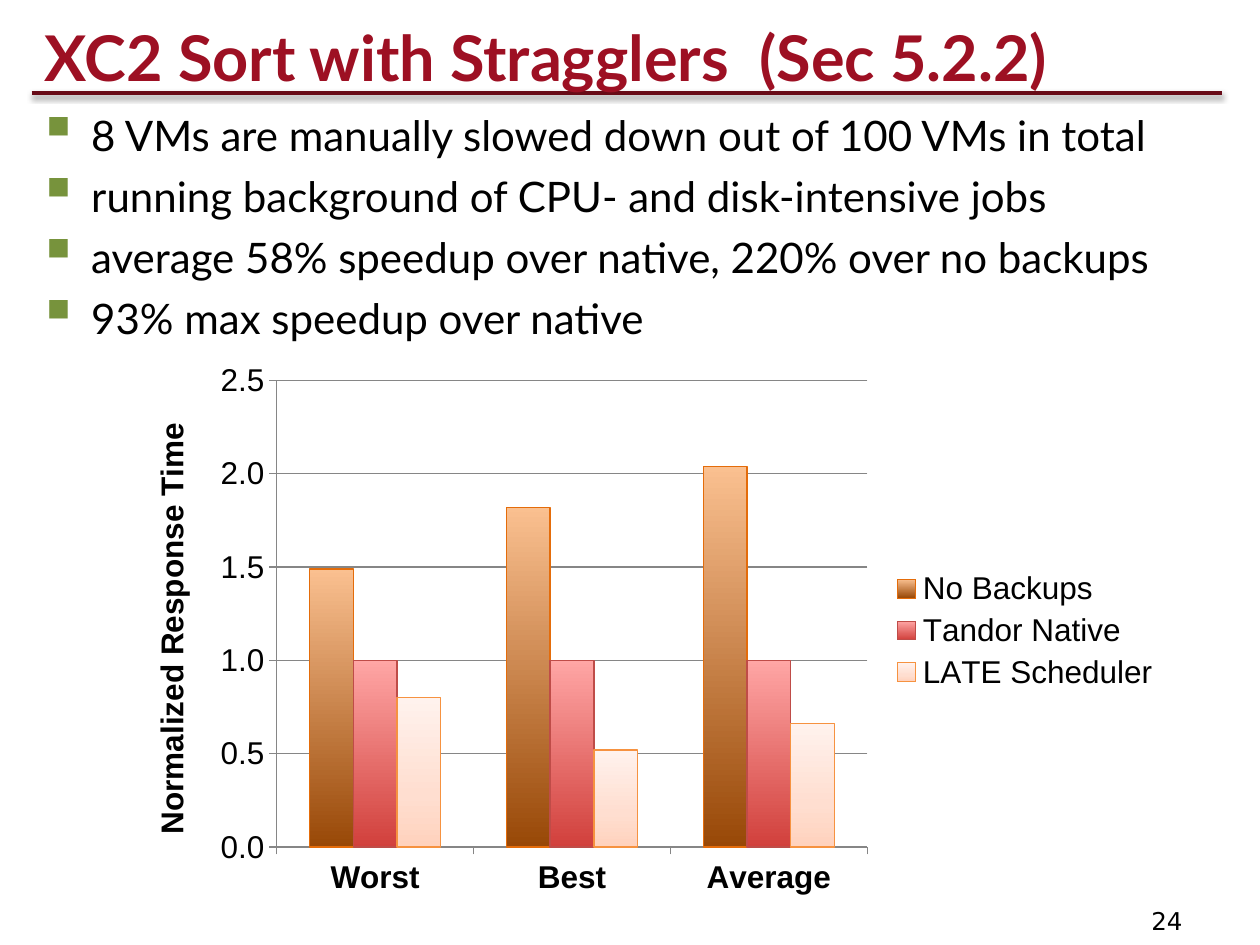
from pptx import Presentation
from pptx import util as u
from pptx.chart import data
from pptx.dml.color import RGBColor
from pptx.enum import chart as ch, shapes, text
from pptx.oxml import parse_xml
from pptx.oxml.ns import nsdecls

CRIMSON = RGBColor(0x9D, 0x10, 0x23)
MAROON = RGBColor(0x68, 0x0B, 0x17)
BLACK = RGBColor(0, 0, 0)
GREEN = RGBColor(0x77, 0x93, 0x3C)
GRAY = RGBColor(0x86, 0x86, 0x86)
ORANGE = RGBColor(0xE4, 0x6C, 0x0A)
RED = RGBColor(0xBF, 0x4C, 0x48)
PEACH = RGBColor(0xF6, 0x92, 0x40)
BROWN_STOPS = [(0, RGBColor(0x98, 0x48, 0x07)), (100, RGBColor(0xFA, 0xC0, 0x90))]
RED_STOPS = [(0, RGBColor(0xD1, 0x40, 0x3C)), (100, RGBColor(0xFF, 0xA6, 0xA5))]
PEACH_STOPS = [(0, RGBColor(0xFF, 0xD2, 0xBD)), (35, RGBColor(0xFF, 0xDE, 0xD0)),
               (100, RGBColor(0xFF, 0xF2, 0xED))]


def style(font, size, name, color=BLACK, bold=False):
    font.size, font.name, font.bold = u.Pt(size), name, bold
    font.color.rgb = color


def add_text(page, place, lines, size, name, color=BLACK, bold=False):
    box = page.shapes.add_textbox(*[u.Cm(value) for value in place])
    frame = box.text_frame
    frame.word_wrap = True
    frame.text = "\n".join(lines)
    for para in frame.paragraphs:
        for span in para.runs:
            style(span.font, size, name, color, bold)
    return frame


deck = Presentation()
deck.slide_width, deck.slide_height = u.Cm(25.4), u.Cm(19.05)
page = deck.slides.add_slide(deck.slide_layouts[6])

# Rule under the title, with a soft shadow
rule = page.shapes.add_connector(shapes.MSO_CONNECTOR.STRAIGHT,
                                 u.Cm(0.64), u.Cm(1.88), u.Cm(24.64), u.Cm(1.88))
rule.line.color.rgb = MAROON
rule.line.width = u.Pt(2)
rule._element.spPr.append(parse_xml(
    f'<a:effectLst {nsdecls("a")}>'
    f'<a:outerShdw blurRad="{u.Pt(3.1)}" dist="{u.Pt(1.6)}" dir="5400000" rotWithShape="0">'
    f'<a:srgbClr val="{BLACK}"><a:alpha val="38000"/></a:srgbClr>'
    '</a:outerShdw></a:effectLst>'))

# Title
title = add_text(page, (0.64, 0.23, 24, 1.8), ["XC2 Sort with Stragglers  (Sec 5.2.2)"],
                 36, "Lato", CRIMSON, True)
title.vertical_anchor = text.MSO_ANCHOR.MIDDLE

# Bullet list (the section sign is the small square in Wingdings)
body = add_text(page, (0.64, 2.08, 24, 10.16), [
    "8 VMs are manually slowed down out of 100 VMs in total",
    "running background of CPU- and disk-intensive jobs",
    "average 58% speedup over native, 220% over no backups",
    "93% max speedup over native",
], 24, "Lato")
for para in body.paragraphs:
    para.space_after = u.Pt(6)
    props = para._p.get_or_add_pPr()
    props.set("marL", str(u.Cm(0.95)))
    props.set("indent", str(-u.Cm(0.95)))
    for bullet in (f'<a:buClr {nsdecls("a")}><a:srgbClr val="{GREEN}"/></a:buClr>',
                   f'<a:buSzPct {nsdecls("a")} val="150000"/>',
                   f'<a:buFont {nsdecls("a")} typeface="Wingdings" charset="2"/>',
                   f'<a:buChar {nsdecls("a")} char="§"/>'):
        props.append(parse_xml(bullet))

# Chart
series_table = [
    ("No Backups", (1.49, 1.82, 2.04), BROWN_STOPS, ORANGE),
    ("Tandor Native", (1, 1, 1), RED_STOPS, RED),
    ("LATE Scheduler", (0.8, 0.52, 0.66), PEACH_STOPS, PEACH),
]
numbers = data.CategoryChartData()
numbers.categories = ["Worst", "Best", "Average"]
for name, values, stops, outline in series_table:
    numbers.add_series(name, values)
chart = page.shapes.add_chart(ch.XL_CHART_TYPE.COLUMN_CLUSTERED, u.Cm(2.39), u.Cm(7.11),
                              u.Cm(21.26), u.Cm(11.2), numbers).chart
style(chart.font, 18, "Arial")
chart.has_title = False
chart.has_legend = True
chart.legend.position = ch.XL_LEGEND_POSITION.RIGHT
chart.legend.include_in_layout = False

# Bars with vertical gradients
plot = chart.plots[0]
plot.gap_width = 150
plot.overlap = 0
plot.vary_by_categories = False
for series, (name, values, stops, outline) in zip(plot.series, series_table):
    series.format.line.color.rgb = outline
    series.format.line.width = u.Pt(0.75)
    marks = "".join(f'<a:gs pos="{place * 1000}"><a:srgbClr val="{color}"/></a:gs>'
                    for place, color in stops)
    series._element.get_or_add_spPr().insert(0, parse_xml(
        f'<a:gradFill {nsdecls("a")} rotWithShape="1"><a:gsLst>{marks}</a:gsLst>'
        '<a:lin ang="16200000" scaled="0"/></a:gradFill>'))

# Axes
categories, scale = chart.category_axis, chart.value_axis
style(categories.tick_labels.font, 18, "Arial", bold=True)
style(scale.tick_labels.font, 18, "Arial")
scale.minimum_scale, scale.maximum_scale, scale.major_unit = 0, 2.5, 0.5
scale.tick_labels.number_format = "0.0"
scale.tick_labels.number_format_is_linked = False
scale.has_major_gridlines = True
for axis in (categories, scale):
    axis.major_tick_mark = ch.XL_TICK_MARK.OUTSIDE
for item in (categories, scale, scale.major_gridlines):
    item.format.line.color.rgb = GRAY
    item.format.line.width = u.Pt(0.75)
caption = scale.axis_title.text_frame
caption.text = "Normalized Response Time"
style(caption.paragraphs[0].runs[0].font, 18, "Arial", bold=True)
caption._txBody.bodyPr.set("rot", "-5400000")
caption._txBody.bodyPr.set("vert", "horz")

# Plot area as shares of the chart frame
area = chart._chartSpace.chart.plotArea
for layout in area.findall("{*}layout"):
    area.remove(layout)
shares = "".join(f'<c:{key} val="{value}"/>' for key, value in
                 (("x", 0.15), ("y", 0.05), ("w", 0.56), ("h", 0.84)))
area.insert(0, parse_xml(
    f'<c:layout {nsdecls("c")}><c:manualLayout><c:layoutTarget val="inner"/>'
    f'<c:xMode val="edge"/><c:yMode val="edge"/>{shares}</c:manualLayout></c:layout>'))

# Page number
add_text(page, (22.96, 18.14, 1.88, 0.81), ["24"], 14, "DejaVu Sans")

deck.save("out.pptx")
